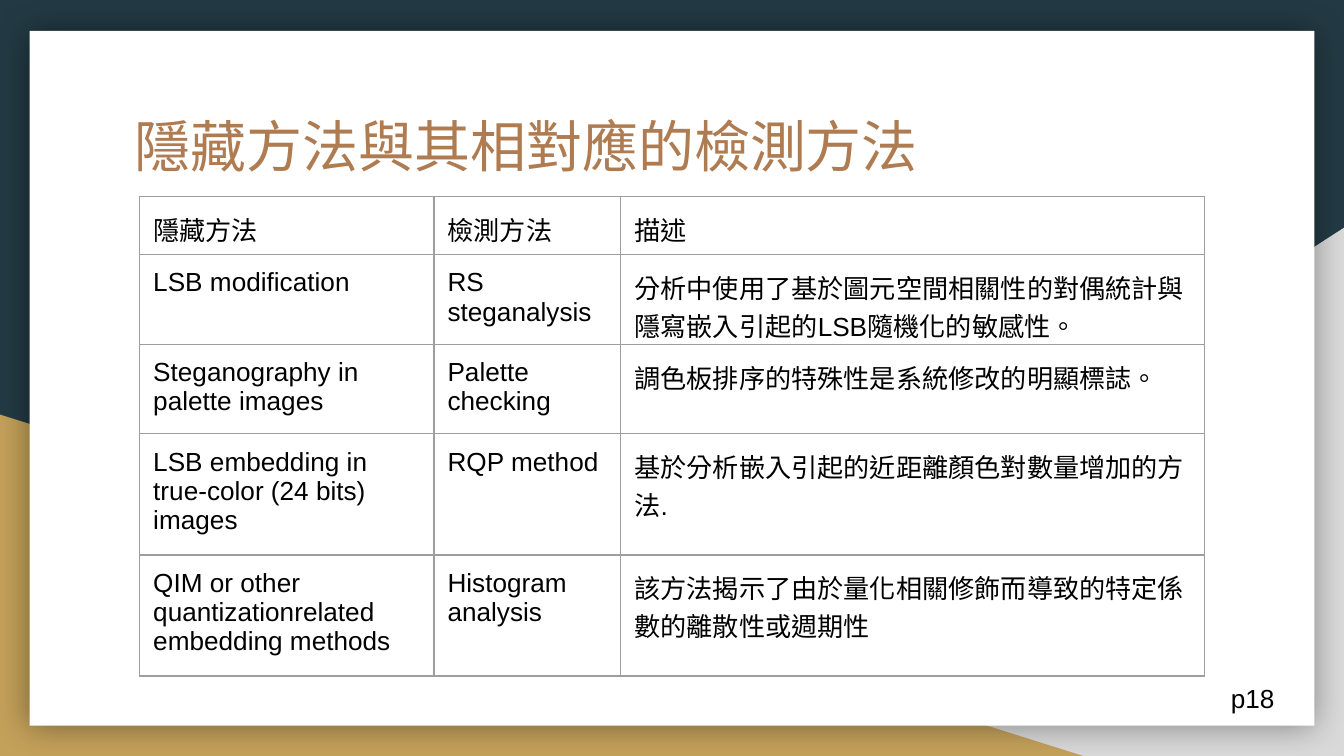
import lxml.etree
import pptx
import pptx.dml.color
import pptx.enum.shapes
import pptx.enum.text
import pptx.oxml.ns
import pptx.util

Inches = pptx.util.Inches
Pt = pptx.util.Pt
RGBColor = pptx.dml.color.RGBColor
Shape = pptx.enum.shapes.MSO_SHAPE
qn = pptx.oxml.ns.qn

NAVY = RGBColor(0x23, 0x3A, 0x44)
GREY = RGBColor(0xD9, 0xD9, 0xD9)
GOLD = RGBColor(0xC4, 0xA1, 0x5A)
WHITE = RGBColor(0xFF, 0xFF, 0xFF)
BROWN = RGBColor(0xAF, 0x7B, 0x51)
BLACK = RGBColor(0, 0, 0)
BORDER = RGBColor(0x9E, 0x9E, 0x9E)

BODY_FONT = "Arial"
TITLE_FONT = "TeX Gyre Adventor"
SLIDE_WIDTH = 10
SLIDE_HEIGHT = SLIDE_WIDTH * 9 / 16
PADDING = Inches(0.1)

COLUMN_WIDTHS = [2.19, 1.39, 4.34]
ROW_HEIGHT = 0.42
METHODS = [
    ("隱藏方法", "檢測方法", "描述"),
    ("LSB modification", "RS steganalysis",
     "分析中使用了基於圖元空間相關性的對偶統計與隱寫嵌入引起的LSB隨機化的敏感性。"),
    ("Steganography in palette images", "Palette checking",
     "調色板排序的特殊性是系統修改的明顯標誌。"),
    ("LSB embedding in true-color (24 bits) images", "RQP method",
     "基於分析嵌入引起的近距離顏色對數量增加的方法."),
    ("QIM or other quantizationrelated embedding methods", "Histogram analysis",
     "該方法揭示了由於量化相關修飾而導致的特定係數的離散性或週期性"),
]


def add_element(parent, tag, **attributes):
    return lxml.etree.SubElement(parent, qn(tag), attributes)


def write_text(frame, text, size, font=BODY_FONT, color=BLACK):
    span = frame.paragraphs[0].add_run()
    span.text = text
    span.font.size = Pt(size)
    span.font.name = font
    span.font.color.rgb = color
    span.font._element.set("lang", "zh-TW")
    return span


def add_text(page, box, text, size, margin_y=Inches(0.05), **style):
    """Return the text frame and its run."""
    frame = page.shapes.add_textbox(*map(Inches, box)).text_frame
    frame.word_wrap = True
    frame.vertical_anchor = pptx.enum.text.MSO_ANCHOR.TOP
    frame.margin_left = frame.margin_right = PADDING
    frame.margin_top = frame.margin_bottom = margin_y
    return frame, write_text(frame, text, size, **style)


def add_title(page, box, text):
    span = add_text(page, box, text, 30, margin_y=PADDING,
                    font=TITLE_FONT, color=BROWN)[1]
    add_element(span.font._element, "a:ea", typeface=TITLE_FONT)


def add_page_number(page, box, text):
    frame = add_text(page, box, text, 14)[0]
    frame.auto_size = pptx.enum.text.MSO_AUTO_SIZE.SHAPE_TO_FIT_TEXT


def add_plain_shape(page, kind, box, color):
    shape = page.shapes.add_shape(kind, *map(Inches, box))
    shape.shadow.inherit = False
    shape.fill.solid()
    shape.fill.fore_color.rgb = color
    shape.line.fill.background()
    return shape


def add_glow_shadow(shape):
    """Soft shadow spreading evenly around the shape."""
    effects = shape._element.spPr.find(qn("a:effectLst"))
    shadow = add_element(effects, "a:outerShdw", blurRad=str(Pt(18)), dist="0",
                         dir="0", algn="ctr", rotWithShape="0")
    color = add_element(shadow, "a:srgbClr", val=str(BLACK))
    add_element(color, "a:alpha", val="40000")


def add_backdrop(page, width, height):
    """Navy ground, two corner triangles and the white card."""
    page.background.fill.solid()
    page.background.fill.fore_color.rgb = NAVY
    right = add_plain_shape(page, Shape.RIGHT_TRIANGLE,
                            (width - 6.08, height - 3.93, 6.08, 3.93), GREY)
    right._element.spPr.xfrm.set("flipH", "1")
    add_plain_shape(page, Shape.RIGHT_TRIANGLE, (0, height - 2.54, 8.06, 2.54), GOLD)
    card = add_plain_shape(page, Shape.RECTANGLE,
                           (0.22, 0.23, width - 0.44, 5.17), WHITE)
    add_glow_shadow(card)


def set_borders(cell):
    properties = cell._tc.get_or_add_tcPr()
    for index, side in enumerate(("a:lnL", "a:lnR", "a:lnT", "a:lnB")):
        line = add_element(properties, side, w=str(Pt(0.75)))
        fill = add_element(line, "a:solidFill")
        add_element(fill, "a:srgbClr", val=str(BORDER))
        properties.insert(index, line)


def add_method_table(page, box):
    holder = page.shapes.add_table(len(METHODS), len(COLUMN_WIDTHS), *map(Inches, box))
    table = holder.table
    table.first_row = table.horz_banding = False
    for column, width in zip(table.columns, COLUMN_WIDTHS):
        column.width = Inches(width)
    for row, texts in zip(table.rows, METHODS):
        row.height = Inches(ROW_HEIGHT)
        for cell, text in zip(row.cells, texts):
            cell.margin_left = cell.margin_right = PADDING
            cell.margin_top = cell.margin_bottom = PADDING
            cell.fill.background()
            set_borders(cell)
            write_text(cell.text_frame, text, 14)
    holder.height = Inches(box[3])


def main():
    deck = pptx.Presentation()
    deck.slide_width = Inches(SLIDE_WIDTH)
    deck.slide_height = Inches(SLIDE_HEIGHT)
    page = deck.slides.add_slide(deck.slide_layouts[6])
    add_backdrop(page, SLIDE_WIDTH, SLIDE_HEIGHT)
    add_title(page, (0.9, 0.73, 8.21, 1.04), "隱藏方法與其相對應的檢測方法")
    add_method_table(page, (1.04, 1.46, 7.92, 3.57))
    add_page_number(page, (9.06, 5.03, 0.62, 0.34), "p18")
    deck.save("out.pptx")


if __name__ == "__main__":
    main()
